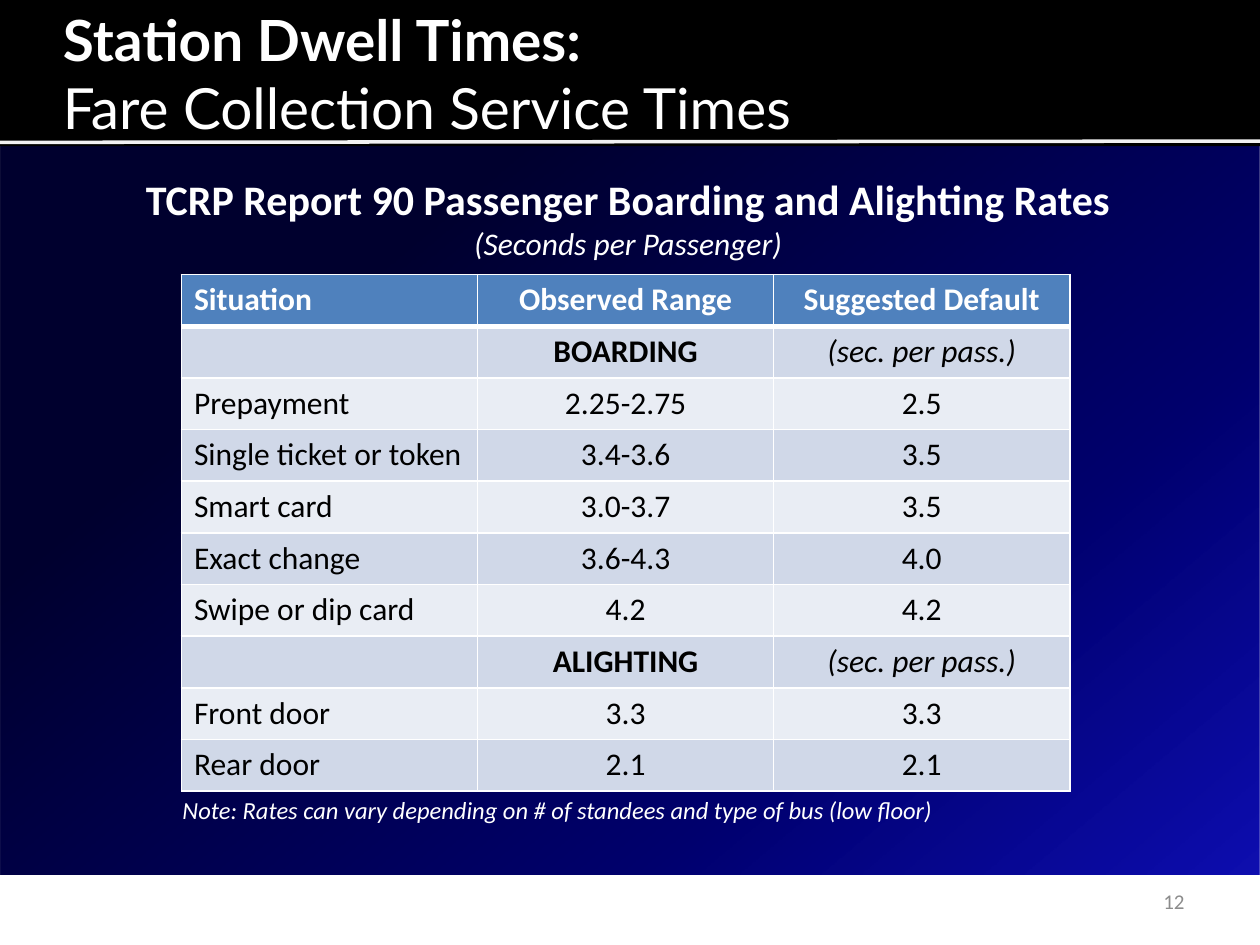
from dataclasses import dataclass

from lxml.etree import SubElement
from pptx import Presentation
from pptx.dml.color import RGBColor
from pptx.enum.shapes import MSO_CONNECTOR, MSO_SHAPE
from pptx.enum.text import MSO_ANCHOR, PP_ALIGN
from pptx.oxml import parse_xml
from pptx.oxml.ns import nsdecls, qn
from pptx.util import Inches, Pt


@dataclass(frozen=True)
class Theme:
    title_font: str = "Lato"
    body_font: str = "Calibri"
    white: str = "FFFFFF"
    black: str = "000000"
    rule: str = "F2F2F2"
    page_number: str = "8C8C8C"
    header: str = "4F81BD"
    bands: tuple = ("D0D8E8", "E9EDF4")
    # position %, colour, opacity %
    gradient: tuple = ((25, "00002E", 100), (71, "00006D", 100), (100, "0000AC", 94))
    gradient_angle: int = 50
    title_size: float = 32.4
    heading_size: int = 24
    body_size: int = 18
    note_size: int = 14
    number_size: int = 12


THEME = Theme()
UNIT = "(sec. per pass.)"
ROWS = [
    ("Situation", "Observed Range", "Suggested Default"),
    ("", "BOARDING", UNIT),
    ("Prepayment", "2.25-2.75", "2.5"),
    ("Single ticket or token", "3.4-3.6", "3.5"),
    ("Smart card", "3.0-3.7", "3.5"),
    ("Exact change", "3.6-4.3", "4.0"),
    ("Swipe or dip card", "4.2", "4.2"),
    ("", "ALIGHTING", UNIT),
    ("Front door", "3.3", "3.3"),
    ("Rear door", "2.1", "2.1"),
]


def style_font(font, size, color=THEME.white, bold=False, italic=False, name=THEME.body_font):
    font.name = name
    font.size = Pt(size)
    font.bold = bold
    font.italic = italic
    font.color.rgb = RGBColor.from_string(color)


def add_panel(s, left, top, width, height, color):
    sp = s.shapes.add_shape(MSO_SHAPE.RECTANGLE, Inches(left), Inches(top),
                            Inches(width), Inches(height))
    sp.shadow.inherit = False
    sp.line.fill.background()
    sp.fill.solid()
    sp.fill.fore_color.rgb = RGBColor.from_string(color)
    return sp


def apply_gradient(sp, stops, angle):
    """Replace the solid fill with a linear gradient of any number of stops."""
    stop_xml = "".join(
        f'<a:gs pos="{pos * 1000}"><a:srgbClr val="{color}">'
        f'<a:alpha val="{opacity * 1000}"/></a:srgbClr></a:gs>'
        for pos, color, opacity in stops)
    gradient = parse_xml(
        f'<a:gradFill {nsdecls("a")} rotWithShape="1"><a:gsLst>{stop_xml}</a:gsLst>'
        f'<a:lin ang="{angle * 60000}" scaled="0"/></a:gradFill>')
    props = sp.element.spPr
    props.replace(props.find(qn("a:solidFill")), gradient)


def add_rule(s, x1, y1, x2, y2, color, width):
    line = s.shapes.add_connector(MSO_CONNECTOR.STRAIGHT, Inches(x1), Inches(y1),
                                  Inches(x2), Inches(y2))
    line.line.color.rgb = RGBColor.from_string(color)
    line.line.width = Pt(width)
    SubElement(line.element.spPr, qn("a:effectLst"))


def add_text(s, left, top, width, height, lines, align=PP_ALIGN.LEFT,
             anchor=MSO_ANCHOR.TOP, wrap=False, inset=None):
    """Add a text box; lines holds pairs of text and font options."""
    box = s.shapes.add_textbox(Inches(left), Inches(top), Inches(width), Inches(height))
    tf = box.text_frame
    tf.word_wrap = wrap
    tf.vertical_anchor = anchor
    if inset is not None:
        tf.margin_left = tf.margin_right = tf.margin_top = tf.margin_bottom = Inches(inset)
    for i, (text, options) in enumerate(lines):
        p = tf.add_paragraph() if i else tf.paragraphs[0]
        p.text = text
        p.alignment = align
        style_font(p.runs[0].font, **options)


def set_borders(cell, color, bottom):
    props = cell._tc.get_or_add_tcPr()
    for side, width in (("L", 1), ("R", 1), ("T", 1), ("B", bottom)):
        props.append(parse_xml(
            f'<a:ln{side} {nsdecls("a")} w="{Pt(width)}"><a:solidFill>'
            f'<a:srgbClr val="{color}"/></a:solidFill></a:ln{side}>'))


def add_rates_table(s, left, top, col_width, row_height, rows):
    n_cols = len(rows[0])
    table = s.shapes.add_table(len(rows), n_cols, Inches(left), Inches(top),
                               Inches(col_width * n_cols),
                               Inches(row_height * len(rows))).table
    for column in table.columns:
        column.width = Inches(col_width)
    for i, row in enumerate(rows):
        is_header = i == 0
        fill = THEME.header if is_header else THEME.bands[(i - 1) % 2]
        for j, text in enumerate(row):
            cell = table.cell(i, j)
            # A thick line parts the header from the body
            set_borders(cell, THEME.white, 3 if is_header else 1)
            cell.fill.solid()
            cell.fill.fore_color.rgb = RGBColor.from_string(fill)
            cell.text_frame.text = text
            p = cell.text_frame.paragraphs[0]
            p.alignment = PP_ALIGN.CENTER if j else PP_ALIGN.LEFT
            for r in p.runs:
                style_font(r.font, THEME.body_size,
                           THEME.white if is_header else THEME.black,
                           bold=is_header or text.isupper(), italic=text == UNIT)


def main():
    prs = Presentation()
    prs.slide_width, prs.slide_height = Inches(10), Inches(7.5)
    s = prs.slides.add_slide(prs.slide_layouts[6])

    backdrop = add_panel(s, 0, 1.08, 10, 5.86, THEME.black)
    apply_gradient(backdrop, THEME.gradient, THEME.gradient_angle)
    add_panel(s, 0, -0.01, 10, 1.17, THEME.black)
    add_rule(s, -0.03, 1.13, 10, 1.12, THEME.rule, 2)

    title = dict(size=THEME.title_size, name=THEME.title_font)
    add_text(s, 0.5, 0.18, 9, 0.8,
             [("Station Dwell Times:", dict(title, bold=True)),
              ("Fare Collection Service Times", title)],
             anchor=MSO_ANCHOR.MIDDLE, wrap=True, inset=0)
    add_rates_table(s, 1.44, 2.18, 2.35, 0.41, ROWS)
    add_text(s, 1, 1.33, 7.97, 0.81,
             [("TCRP Report 90 Passenger Boarding and Alighting Rates",
               dict(size=THEME.heading_size, bold=True)),
              ("(Seconds per Passenger)", dict(size=THEME.body_size, italic=True))],
             align=PP_ALIGN.CENTER)
    add_text(s, 1.35, 6.26, 6.26, 0.34,
             [("Note: Rates can vary depending on # of standees and type of bus (low floor)",
               dict(size=THEME.note_size, italic=True))])
    add_text(s, 7.17, 6.95, 2.33, 0.4,
             [("12", dict(size=THEME.number_size, color=THEME.page_number))],
             align=PP_ALIGN.RIGHT, anchor=MSO_ANCHOR.MIDDLE, wrap=True)

    prs.save("out.pptx")


if __name__ == "__main__":
    main()
